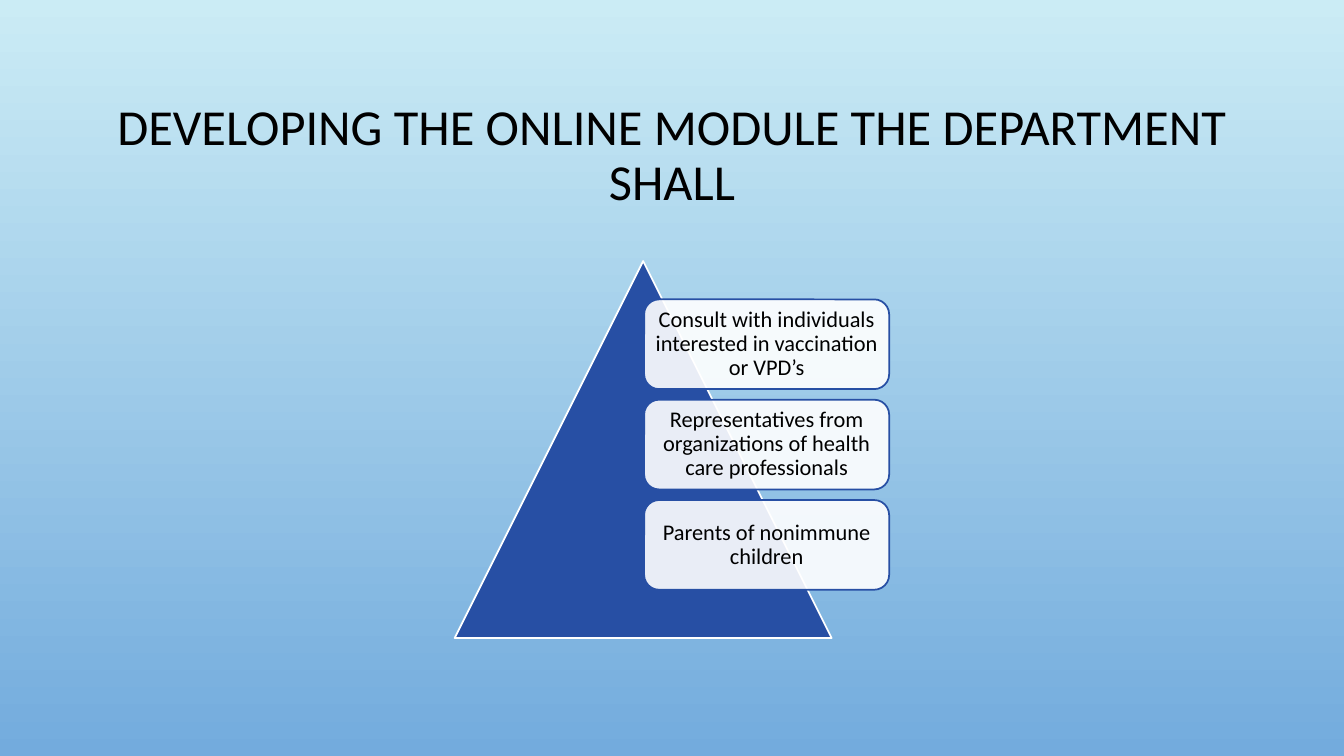
from dataclasses import dataclass

from lxml import etree
from pptx import Presentation, util as u
from pptx.dml.color import RGBColor
from pptx.enum import shapes, text
from pptx.oxml import ns

WIDTH, HEIGHT = u.Inches(13.333), u.Inches(7.5)
FONT = "Calibri"
COLOURS = {
    "sky": "CBECF5",
    "horizon": "73ABDD",
    "pyramid": "274FA4",
    "card": "FFFFFF",
    "ink": "000000",
}
CARD_PITCH = 13.27


@dataclass(frozen=True)
class Area:
    """Left, top, width and height in percent of the slide's size."""
    left: float
    top: float
    width: float
    height: float

    def lengths(self) -> tuple[int, int, int, int]:
        return (
            int(WIDTH * self.left / 100),
            int(HEIGHT * self.top / 100),
            int(WIDTH * self.width / 100),
            int(HEIGHT * self.height / 100),
        )


@dataclass(frozen=True)
class Card:
    row: int
    wording: str

    @property
    def area(self) -> Area:
        return Area(47.93, 39.6 + self.row * CARD_PITCH, 18.23, 11.87)


TITLE_AREA = Area(7.5, 9.07, 85, 23.33)
PYRAMID_AREA = Area(33.83, 34.53, 28.05, 49.87)
WORDINGS = (
    "Consult with individuals interested in vaccination or VPD’s",
    "Representatives from organizations of health care professionals",
    "Parents of nonimmune children",
)
CARDS = [Card(row, wording) for row, wording in enumerate(WORDINGS)]


def colour(name: str) -> RGBColor:
    return RGBColor.from_string(COLOURS[name])


def paint_background(page) -> None:
    fill = page.background.fill
    fill.gradient()
    fill.gradient_angle = 270
    for stop, name in zip(fill.gradient_stops, ("sky", "horizon")):
        stop.color.rgb = colour(name)


def write(box, wording: str, size: float, inset: float) -> None:
    frame = box.text_frame
    frame.word_wrap = True
    frame.vertical_anchor = text.MSO_ANCHOR.MIDDLE
    frame.margin_left = frame.margin_right = u.Inches(inset)
    frame.margin_top = frame.margin_bottom = u.Inches(0.07)
    para = frame.paragraphs[0]
    para.alignment = text.PP_ALIGN.CENTER
    para.line_spacing = 0.9
    span = para.add_run()
    span.text = wording
    span.font.name = FONT
    span.font.size = u.Pt(size)
    span.font.color.rgb = colour("ink")


def add_figure(page, preset, area: Area, fill: str, line: str):
    figure = page.shapes.add_shape(preset, *area.lengths())
    figure.shadow.inherit = False
    figure.fill.solid()
    figure.fill.fore_color.rgb = colour(fill)
    figure.line.color.rgb = colour(line)
    figure.line.width = u.Pt(1.25)
    return figure


def set_opacity(figure, percent: int) -> None:
    paint = figure.fill._xPr.find(ns.qn("a:solidFill"))[0]
    etree.SubElement(paint, ns.qn("a:alpha"), val=str(percent * 1000))


def add_card(page, card: Card) -> None:
    figure = add_figure(
        page, shapes.MSO_SHAPE.ROUNDED_RECTANGLE, card.area, "card", "pyramid"
    )
    set_opacity(figure, 90)
    write(figure, card.wording, 16, 0.07)


def main() -> None:
    deck = Presentation()
    deck.slide_width, deck.slide_height = WIDTH, HEIGHT
    page = deck.slides.add_slide(deck.slide_layouts[6])
    paint_background(page)
    title = page.shapes.add_textbox(*TITLE_AREA.lengths())
    write(title, "DEVELOPING THE ONLINE MODULE THE DEPARTMENT SHALL", 36, 0.1)
    add_figure(
        page, shapes.MSO_SHAPE.ISOSCELES_TRIANGLE, PYRAMID_AREA, "pyramid", "card"
    )
    for card in CARDS:
        add_card(page, card)
    deck.save("out.pptx")


if __name__ == "__main__":
    main()
